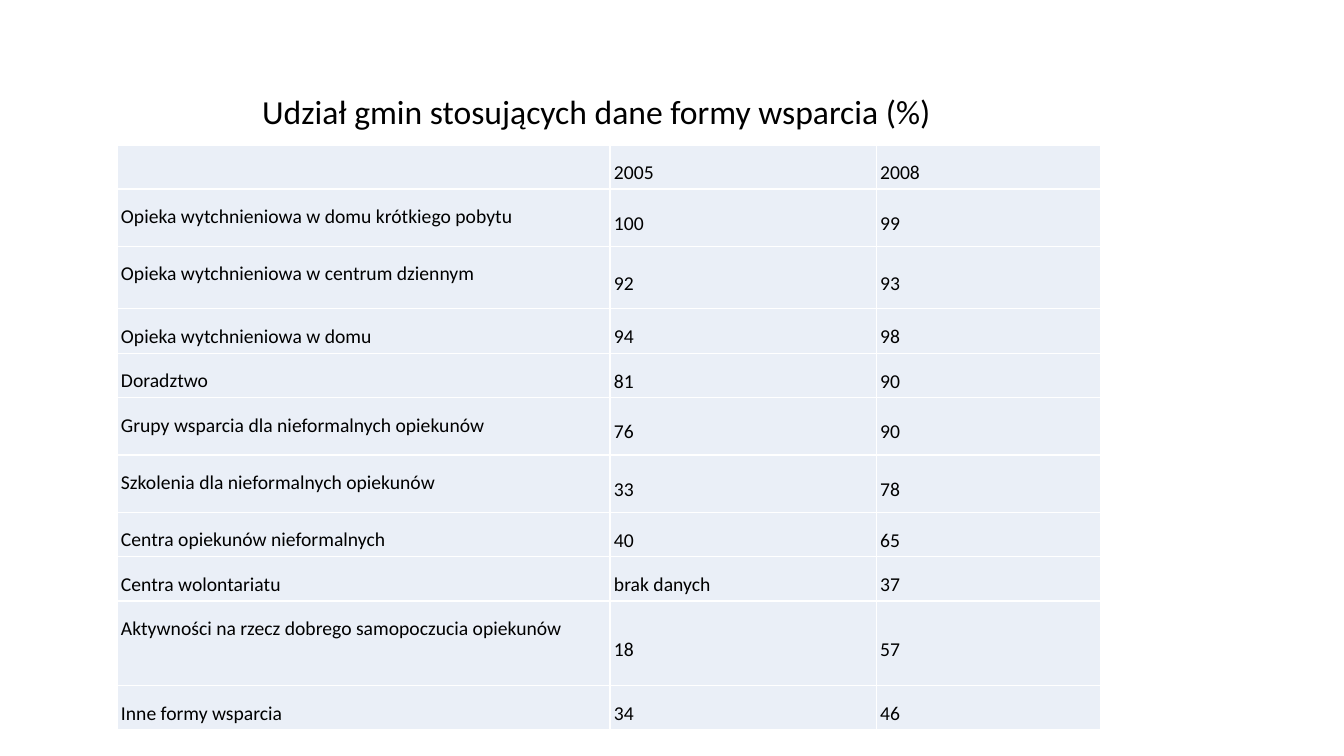
from dataclasses import dataclass

from lxml.etree import SubElement
from pptx import Presentation
from pptx.dml.color import RGBColor
from pptx.enum.text import MSO_ANCHOR, PP_ALIGN
from pptx.oxml.ns import qn
from pptx.slide import Slide
from pptx.table import _Cell
from pptx.text.text import TextFrame
from pptx.util import Inches, Pt


@dataclass(frozen=True)
class Theme:
    font: str = "Calibri"
    text: str = "000000"
    cell_fill: str = "EAEFF7"
    border: str = "FFFFFF"
    border_width: float = 1
    title_size: float = 24
    table_size: float = 14


@dataclass(frozen=True)
class SupportRow:
    label: str
    share_2005: str
    share_2008: str
    height: float


THEME = Theme()
COLUMN_WIDTHS = (4.89, 2.64, 2.23)
SUPPORT_ROWS = (
    SupportRow("", "2005", "2008", 0.41),
    SupportRow("Opieka wytchnieniowa w domu krótkiego pobytu", "100", "99", 0.57),
    SupportRow("Opieka wytchnieniowa w centrum dziennym", "92", "93", 0.62),
    SupportRow("Opieka wytchnieniowa w domu", "94", "98", 0.44),
    SupportRow("Doradztwo", "81", "90", 0.44),
    SupportRow("Grupy wsparcia dla nieformalnych opiekunów", "76", "90", 0.57),
    SupportRow("Szkolenia dla nieformalnych opiekunów", "33", "78", 0.57),
    SupportRow("Centra opiekunów nieformalnych", "40", "65", 0.44),
    SupportRow("Centra wolontariatu", "brak danych", "37", 0.44),
    SupportRow("Aktywności na rzecz dobrego samopoczucia opiekunów", "18", "57", 0.84),
    SupportRow("Inne formy wsparcia", "34", "46", 0.44),
)


def write_text(frame: TextFrame, text: str, *, size: float,
               align: PP_ALIGN, line_spacing: float) -> None:
    paragraph = frame.paragraphs[0]
    paragraph.alignment = align
    paragraph.line_spacing = line_spacing
    run = paragraph.add_run()
    run.text = text
    run.font.name = THEME.font
    run.font.size = Pt(size)
    run.font.color.rgb = RGBColor.from_string(THEME.text)


def format_cell(cell: _Cell, anchor: MSO_ANCHOR) -> None:
    cell.margin_left = cell.margin_right = Inches(0.04)
    cell.margin_top = cell.margin_bottom = Inches(0.04)
    cell.vertical_anchor = anchor
    # Borders come before the fill in the cell properties
    properties = cell._tc.get_or_add_tcPr()
    for side in ("a:lnL", "a:lnR", "a:lnT", "a:lnB"):
        line = SubElement(properties, qn(side), w=str(Pt(THEME.border_width)))
        line_fill = SubElement(line, qn("a:solidFill"))
        SubElement(line_fill, qn("a:srgbClr"), val=THEME.border)
    cell.fill.solid()
    cell.fill.fore_color.rgb = RGBColor.from_string(THEME.cell_fill)


def add_title(slide: Slide) -> None:
    title = slide.shapes.title
    title.left, title.top = Inches(0.92), Inches(0.4)
    title.width, title.height = Inches(11.5), Inches(1.45)
    frame = title.text_frame
    frame.word_wrap = True
    frame.margin_left = Inches(1.68)
    frame.vertical_anchor = MSO_ANCHOR.MIDDLE
    write_text(frame, "Udział gmin stosujących dane formy wsparcia (%)",
               size=THEME.title_size, align=PP_ALIGN.LEFT, line_spacing=0.9)


def add_support_table(slide: Slide) -> None:
    height = sum(row.height for row in SUPPORT_ROWS)
    table = slide.shapes.add_table(
        len(SUPPORT_ROWS), len(COLUMN_WIDTHS), Inches(1.16), Inches(1.44),
        Inches(sum(COLUMN_WIDTHS)), Inches(height)).table
    table.first_row = table.horz_banding = False
    for column, width in zip(table.columns, COLUMN_WIDTHS):
        column.width = Inches(width)

    for row_index, row in enumerate(SUPPORT_ROWS):
        table.rows[row_index].height = Inches(row.height)
        texts = (row.label, row.share_2005, row.share_2008)
        for column_index, text in enumerate(texts):
            cell = table.cell(row_index, column_index)
            is_value = row_index > 0 and column_index > 0
            format_cell(cell, MSO_ANCHOR.MIDDLE if is_value else MSO_ANCHOR.TOP)
            if text:
                write_text(cell.text_frame, text, size=THEME.table_size,
                           align=PP_ALIGN.JUSTIFY, line_spacing=1.5)


def main() -> None:
    presentation = Presentation()
    presentation.slide_width = Inches(13.33)
    presentation.slide_height = Inches(7.5)
    # Title-only layout
    slide = presentation.slides.add_slide(presentation.slide_layouts[5])
    add_title(slide)
    add_support_table(slide)
    presentation.save("out.pptx")


if __name__ == "__main__":
    main()
